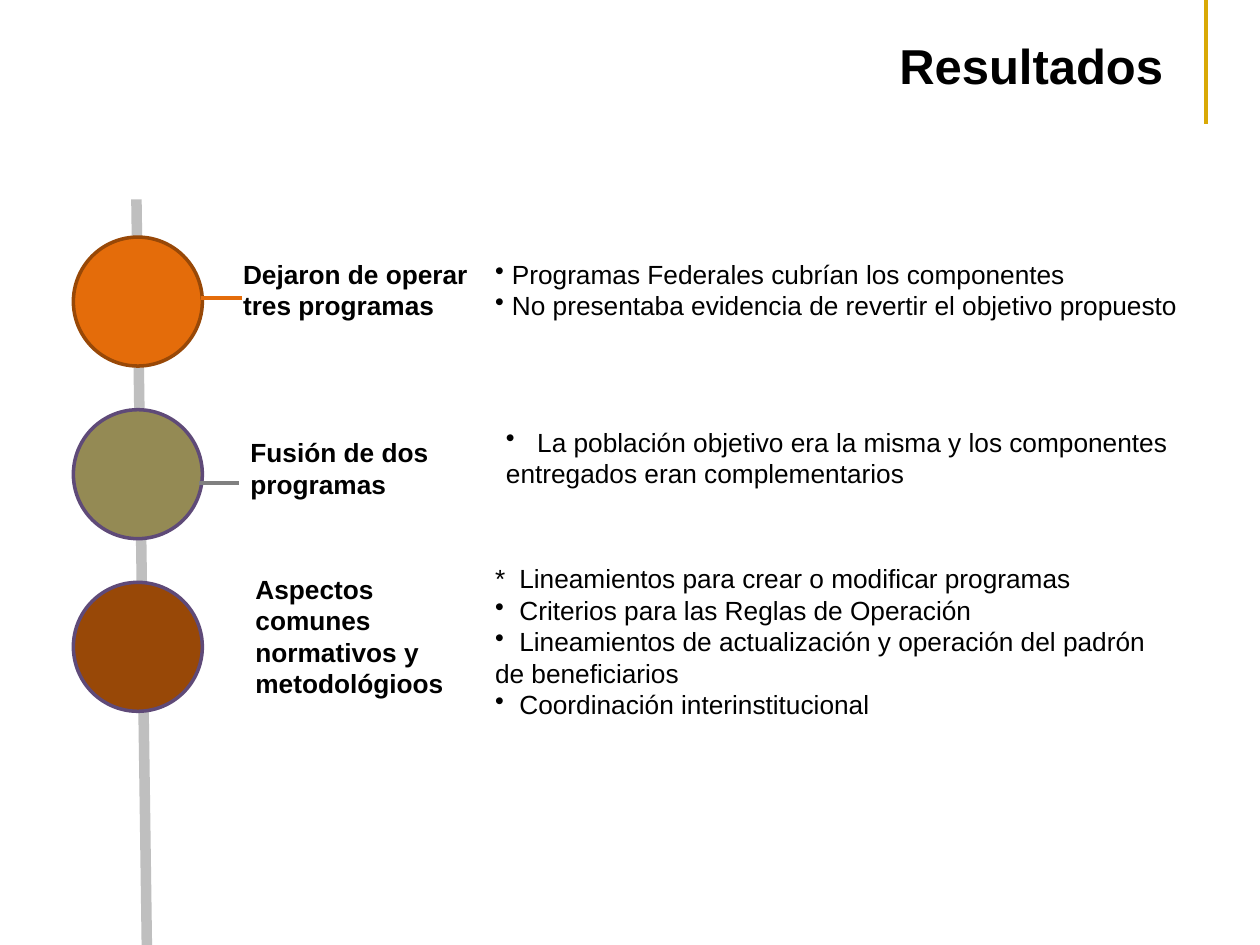
from dataclasses import dataclass

from lxml.etree import SubElement
from pptx import Presentation
from pptx.dml.color import RGBColor
from pptx.enum.shapes import MSO_CONNECTOR as Connector, MSO_SHAPE as Shape
from pptx.enum.text import MSO_ANCHOR as Anchor, PP_ALIGN as Align
from pptx.oxml.ns import qn
from pptx.util import Cm, Pt

COLORS = {
    "text": "000000",
    "gold": "D9A906",
    "timeline": "BFBFBF",
    "orange": "E46C0A",
    "brown": "984807",
    "olive": "948A54",
    "purple": "5F4A78",
    "gray": "808080",
}
CIRCLE_LEFT, CIRCLE_TOP, CIRCLE_SIZE, CIRCLE_STEP = 1.48, 4.78, 2.6, 3.48


@dataclass
class Area:
    left: float
    top: float
    width: float
    height: float


@dataclass
class Detail:
    text: str
    bullet: bool = True


@dataclass
class Result:
    fill: str
    outline: str
    label: list[str]
    label_area: Area
    details: list[Detail]
    detail_area: Area
    tab: float


@dataclass
class Line:
    start: tuple[float, float]
    end: tuple[float, float]
    color: str
    width: float = 2.25


RESULTS = [
    Result(
        "orange", "brown",
        ["Dejaron de operar tres programas"], Area(4.65, 5.08, 5.26, 1.55),
        [Detail("Programas Federales cubrían los componentes"),
         Detail("No presentaba evidencia de revertir el objetivo propuesto")],
        Area(9.73, 5.08, 14.6, 1.55), 0.34,
    ),
    Result(
        "olive", "purple",
        ["Fusión de dos", "programas"], Area(4.8, 8.68, 4.14, 1.55),
        [Detail("La población objetivo era la misma y los componentes "
                "entregados eran complementarios")],
        Area(9.95, 8.46, 14.6, 1.55), 0.63,
    ),
    Result(
        "brown", "purple",
        ["Aspectos comunes normativos y metodológioos"],
        Area(4.9, 11.43, 4.45, 2.82),
        [Detail("Lineamientos para crear o modificar programas", False),
         Detail("Criterios para las Reglas de Operación"),
         Detail("Lineamientos de actualización y operación del padrón "
                "de beneficiarios"),
         Detail("Coordinación interinstitucional")],
        Area(9.73, 11.22, 13.77, 3.48), 0.49,
    ),
]
TIMELINE = Line((2.75, 4.02), (2.96, 19.05), "timeline", 6)
LINES = [
    Line((24.31, 0), (24.31, 2.51), "gold"),
    Line((4.06, 6), (4.87, 6), "orange"),
    Line((4.02, 9.73), (4.82, 9.73), "gray"),
]


def rgb(name: str) -> RGBColor:
    return RGBColor.from_string(COLORS[name])


def place(shape, area: Area) -> None:
    shape.left, shape.top = Cm(area.left), Cm(area.top)
    shape.width, shape.height = Cm(area.width), Cm(area.height)


def write(para, text: str, *, size: float = 15, bold: bool = False,
          align=Align.LEFT, bullet: bool = False, tab: float = 0) -> None:
    properties = para._p.get_or_add_pPr()
    if bullet:
        SubElement(properties, qn("a:buChar"), char="•")
    if tab:
        stops = SubElement(properties, qn("a:tabLst"))
        SubElement(stops, qn("a:tab"), pos=str(Cm(tab)), algn="l")
    para.alignment = align
    span = para.add_run()
    span.text = text
    span.font.name = "Arial"
    span.font.size = Pt(size)
    span.font.bold = bold
    span.font.color.rgb = rgb("text")


def add_box(slide, area: Area):
    box = slide.shapes.add_textbox(0, 0, 0, 0)
    place(box, area)
    box.text_frame.word_wrap = True
    return box.text_frame


def next_para(frame, index: int):
    return frame.add_paragraph() if index else frame.paragraphs[0]


def draw_line(slide, line: Line) -> None:
    connector = slide.shapes.add_connector(
        Connector.STRAIGHT, *map(Cm, line.start + line.end))
    connector.line.color.rgb = rgb(line.color)
    connector.line.width = Pt(line.width)
    SubElement(connector._element.spPr, qn("a:effectLst"))


def draw_result(slide, result: Result, row: int) -> None:
    circle = slide.shapes.add_shape(Shape.OVAL, 0, 0, 0, 0)
    place(circle, Area(CIRCLE_LEFT, CIRCLE_TOP + row * CIRCLE_STEP,
                       CIRCLE_SIZE, CIRCLE_SIZE))
    circle.shadow.inherit = False
    circle.fill.solid()
    circle.fill.fore_color.rgb = rgb(result.fill)
    circle.line.color.rgb = rgb(result.outline)
    circle.line.width = Pt(2)

    label = add_box(slide, result.label_area)
    for index, text in enumerate(result.label):
        write(next_para(label, index), text, bold=True)

    details = add_box(slide, result.detail_area)
    for index, detail in enumerate(result.details):
        marker = "" if detail.bullet else "*"
        write(next_para(details, index), f"{marker}\t{detail.text}",
              bullet=detail.bullet, tab=result.tab)


def main() -> None:
    deck = Presentation()
    deck.slide_width, deck.slide_height = Cm(25.4), Cm(19.05)
    page = deck.slides.add_slide(deck.slide_layouts[5])

    title = page.shapes.title
    place(title, Area(8.1, 0.53, 15.6, 1.55))
    title.text_frame.vertical_anchor = Anchor.MIDDLE
    write(title.text_frame.paragraphs[0], "Resultados",
          size=28, bold=True, align=Align.RIGHT)

    draw_line(page, TIMELINE)
    for row, result in enumerate(RESULTS):
        draw_result(page, result, row)
    for line in LINES:
        draw_line(page, line)

    deck.save("out.pptx")


if __name__ == "__main__":
    main()
